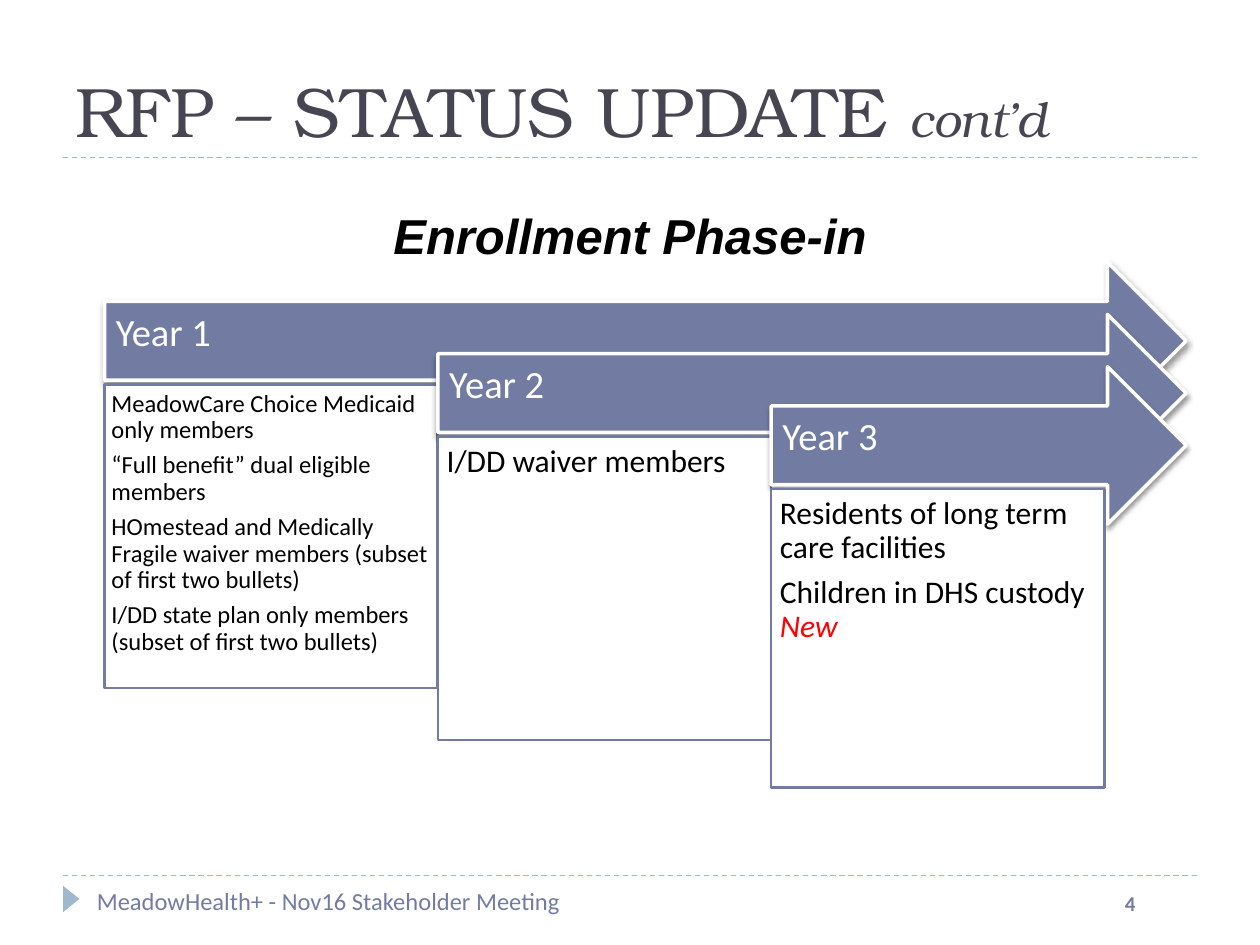
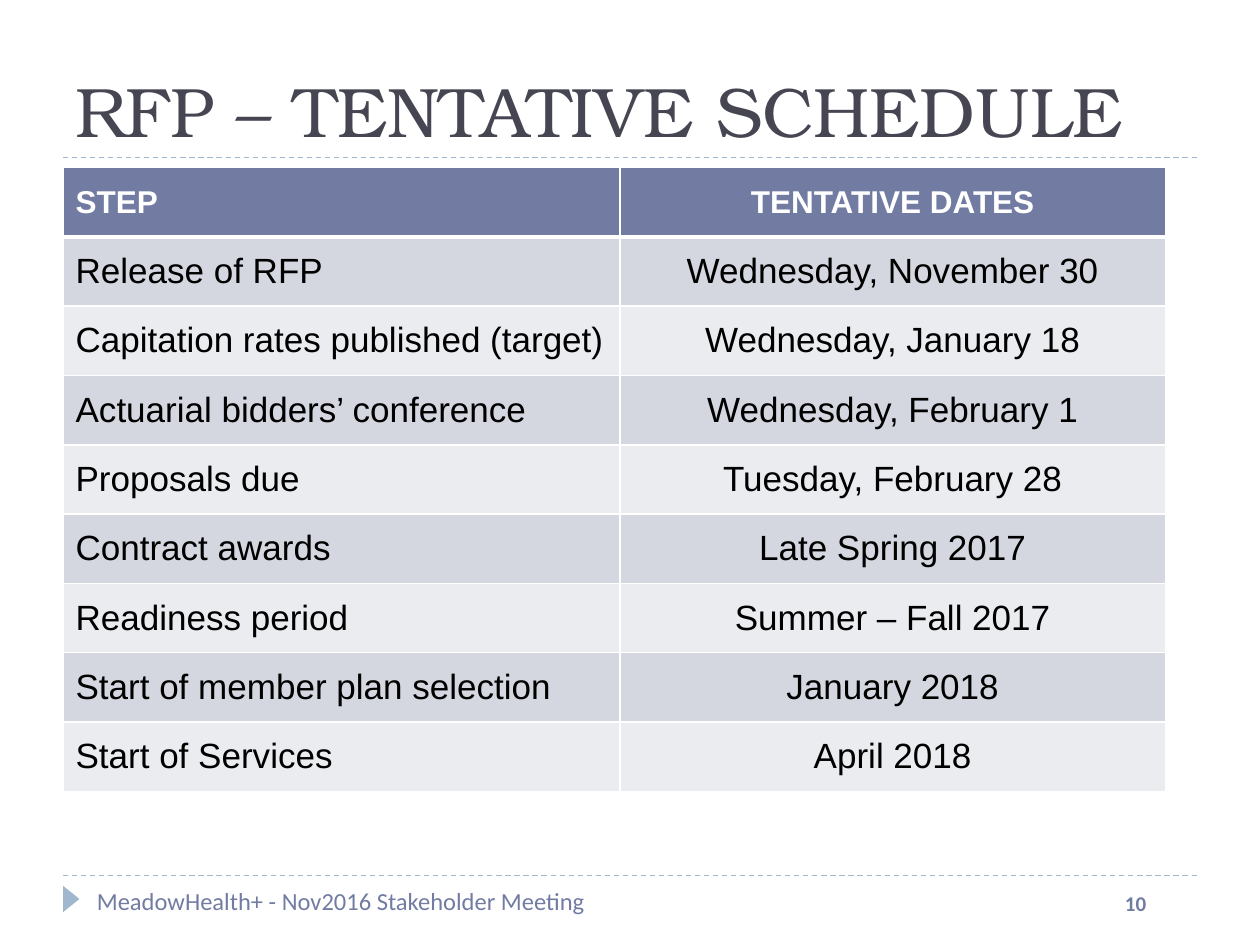
from pptx import Presentation
from pptx.dml.color import RGBColor
from pptx.enum.dml import MSO_LINE
from pptx.enum.shapes import MSO_CONNECTOR, MSO_SHAPE
from pptx.enum.text import MSO_ANCHOR as ANCHOR, MSO_AUTO_SIZE as AUTO, PP_ALIGN as ALIGN
from pptx.oxml import parse_xml
from pptx.oxml.ns import nsdecls
from pptx.util import Pt

EMU_PER_PX = 4572  # 200 px to the inch
COLORS = {
    "accent": "727CA3",
    "rule": "9FB8CD",
    "title": "464653",
    "text": "000000",
    "white": "FFFFFF",
    "new": "FF0000",
    "band_dark": "D5D7E0",
    "band_light": "EBECF0",
}
TITLE_FONT, BODY_FONT, PLAIN_FONT = "TeX Gyre Bonum", "Calibri", "Arial"
TITLE_ONLY = 5


def px(*lengths):
    return [round(length * EMU_PER_PX) for length in lengths]


def rgb(name):
    return RGBColor.from_string(COLORS[name])


class Deck:
    def __init__(self):
        self.prs = Presentation()
        self.prs.slide_width, self.prs.slide_height = px(2000, 1500)
        self.slide = None

    def new_slide(self, title_runs, footer, number):
        """Start a slide with its title, rules and footer."""
        self.slide = self.prs.slides.add_slide(self.prs.slide_layouts[TITLE_ONLY])
        for y in (1390, 250):
            self.rule(100, y, 1900)
        marker = self.shape(MSO_SHAPE.ISOSCELES_TRIANGLE, (92, 1414, 42, 26), "rule")
        marker.rotation = 90
        self.text((1766, 1404, 116, 80), [[(number, {"bold": True})]],
                  size=12, color="accent")
        self.text((134, 1396, 1116, 104), [[(footer, {})]], size=14, color="accent")

        title = self.slide.shapes.title
        title.left, title.top, title.width, title.height = px(100, 34, 1800, 216)
        title.text_frame.auto_size = AUTO.NONE
        self.fill_frame(title.text_frame, [title_runs], anchor=ANCHOR.BOTTOM,
                        font=TITLE_FONT, size=40, color="title")

    def fill_frame(self, frame, paragraphs, font=BODY_FONT, size=18, color="text",
                   align=ALIGN.LEFT, anchor=ANCHOR.TOP, insets=None, tight=False):
        """Fill a frame with paragraphs, each a list of (text, overrides) runs."""
        frame.word_wrap = True
        frame.vertical_anchor = anchor
        if insets:
            (frame.margin_left, frame.margin_top,
             frame.margin_right, frame.margin_bottom) = px(*insets)
        for index, runs in enumerate(paragraphs):
            paragraph = frame.add_paragraph() if index else frame.paragraphs[0]
            paragraph.alignment = align
            if tight:
                paragraph.line_spacing = 0.9
                paragraph.space_after = Pt(round(size * 0.35, 1))
            for words, look in runs:
                run = paragraph.add_run()
                run.text = words
                run.font.name = font
                run.font.size = Pt(look.get("size", size))
                run.font.bold = look.get("bold", False)
                run.font.italic = look.get("italic", False)
                run.font.color.rgb = rgb(look.get("color", color))

    def text(self, box, paragraphs, **style):
        frame = self.slide.shapes.add_textbox(*px(*box)).text_frame
        self.fill_frame(frame, paragraphs, **style)
        return frame

    def rule(self, x1, y, x2):
        rule = self.slide.shapes.add_connector(MSO_CONNECTOR.STRAIGHT, *px(x1, y, x2, y))
        rule.line.color.rgb = rgb("rule")
        rule.line.width = Pt(0.75)
        rule.line.dash_style = MSO_LINE.DASH
        rule._element.spPr.append(parse_xml(f"<a:effectLst {nsdecls('a')}/>"))

    def shape(self, preset, box, fill, line=None, width=1):
        shape = self.slide.shapes.add_shape(preset, *px(*box))
        shape.shadow.inherit = False
        shape.fill.solid()
        shape.fill.fore_color.rgb = rgb(fill)
        if line:
            shape.line.color.rgb = rgb(line)
            shape.line.width = Pt(width)
        else:
            shape.line.fill.background()
        return shape

    def year_arrow(self, box, label):
        arrow = self.shape(MSO_SHAPE.RIGHT_ARROW, box, "accent", "white", 2)
        effects = arrow._element.spPr.find(
            "{http://schemas.openxmlformats.org/drawingml/2006/main}effectLst")
        effects.append(parse_xml(
            f'<a:outerShdw {nsdecls("a")} blurRad="{Pt(3)}" dist="{Pt(2)}" '
            f'dir="5400000" rotWithShape="0"><a:srgbClr val="{COLORS["text"]}">'
            '<a:alpha val="40000"/></a:srgbClr></a:outerShdw>'))
        self.fill_frame(arrow.text_frame, [[(label, {})]], size=22, color="white",
                        anchor=ANCHOR.MIDDLE, insets=(18, 18, 56, 40), tight=True)

    def member_box(self, box, groups, size):
        panel = self.shape(MSO_SHAPE.RECTANGLE, box, "white", "accent", 1.5)
        inset = round(size * 0.8)
        self.fill_frame(panel.text_frame, groups, size=size, insets=[inset] * 4,
                        tight=True)

    def cell_borders(self, cell, top, bottom):
        properties = cell._tc.get_or_add_tcPr()
        for side, width in (("L", 1), ("R", 1), ("T", top), ("B", bottom)):
            properties.append(parse_xml(
                f'<a:ln{side} {nsdecls("a")} w="{Pt(width)}"><a:solidFill>'
                f'<a:srgbClr val="{COLORS["white"]}"/></a:solidFill></a:ln{side}>'))

    def table(self, left, top, column_widths, row_height, rows):
        table = self.slide.shapes.add_table(
            len(rows), len(column_widths),
            *px(left, top, sum(column_widths), row_height * len(rows))).table
        for column, width in zip(table.columns, px(*column_widths)):
            column.width = width
        for r, row in enumerate(rows):
            header = r == 0
            fill = "accent" if header else ("band_light", "band_dark")[r % 2]
            for c, words in enumerate(row):
                cell = table.cell(r, c)
                self.cell_borders(cell, 3 if r == 1 else 1, 3 if header else 1)
                cell.fill.solid()
                cell.fill.fore_color.rgb = rgb(fill)
                cell.vertical_anchor = ANCHOR.MIDDLE
                self.fill_frame(cell.text_frame, [[(words, {"bold": header})]],
                                font=PLAIN_FONT, size=18 if header else 20,
                                color="white" if header else "text",
                                align=ALIGN.CENTER if c else ALIGN.LEFT,
                                anchor=ANCHOR.MIDDLE)


PHASES = [
    ("Year 1", 14, 482, [
        [("MeadowCare Choice Medicaid only members", {})],
        [("“Full benefit” dual eligible members", {})],
        [("HOmestead and Medically Fragile waiver members "
          "(subset of first two bullets)", {})],
        [("I/DD state plan only members (subset of first two bullets)", {})],
    ]),
    ("Year 2", 18, 482, [[("I/DD waiver members", {})]]),
    ("Year 3", 18, 474, [
        [("Residents of long term care facilities", {})],
        [("Children in DHS custody ", {}), ("New", {"color": "new", "italic": True})],
    ]),
]

SCHEDULE = [
    ("STEP", "TENTATIVE DATES"),
    ("Release of RFP", "Wednesday, November 30"),
    ("Capitation rates published (target)", "Wednesday, January 18"),
    ("Actuarial bidders’ conference", "Wednesday, February 1"),
    ("Proposals due", "Tuesday, February 28"),
    ("Contract awards", "Late Spring 2017"),
    ("Readiness period", "Summer – Fall 2017"),
    ("Start of member plan selection", "January 2018"),
    ("Start of Services", "April 2018"),
]


def phase_in_slide(deck):
    deck.new_slide([("RFP – STATUS UPDATE ", {}), ("cont’d", {"size": 28, "italic": True})],
                   "MeadowHealth+ - Nov16 Stakeholder Meeting", "4")
    phase_width, phase_drop, arrow_tip = 529, 83, 1883
    for i, (year, size, height, groups) in enumerate(PHASES):
        left, top = 166 + i * phase_width, 416 + i * phase_drop
        deck.year_arrow((left, top, arrow_tip - left, 250), year)
        deck.member_box((left, top + 194, phase_width, height), groups, size)
    heading = deck.text((600, 316, 800, 114),
                        [[("Enrollment Phase-in", {"bold": True, "italic": True})]],
                        font=PLAIN_FONT, size=28, align=ALIGN.CENTER)
    heading.word_wrap = False
    heading.auto_size = AUTO.SHAPE_TO_FIT_TEXT


def schedule_slide(deck):
    deck.new_slide([("RFP – TENTATIVE SCHEDULE", {})],
                   "MeadowHealth+ - Nov2016 Stakeholder Meeting", "10")
    deck.table(100, 266, (884, 866), 110, SCHEDULE)


def main():
    deck = Deck()
    phase_in_slide(deck)
    schedule_slide(deck)
    deck.prs.save("out.pptx")


if __name__ == "__main__":
    main()
